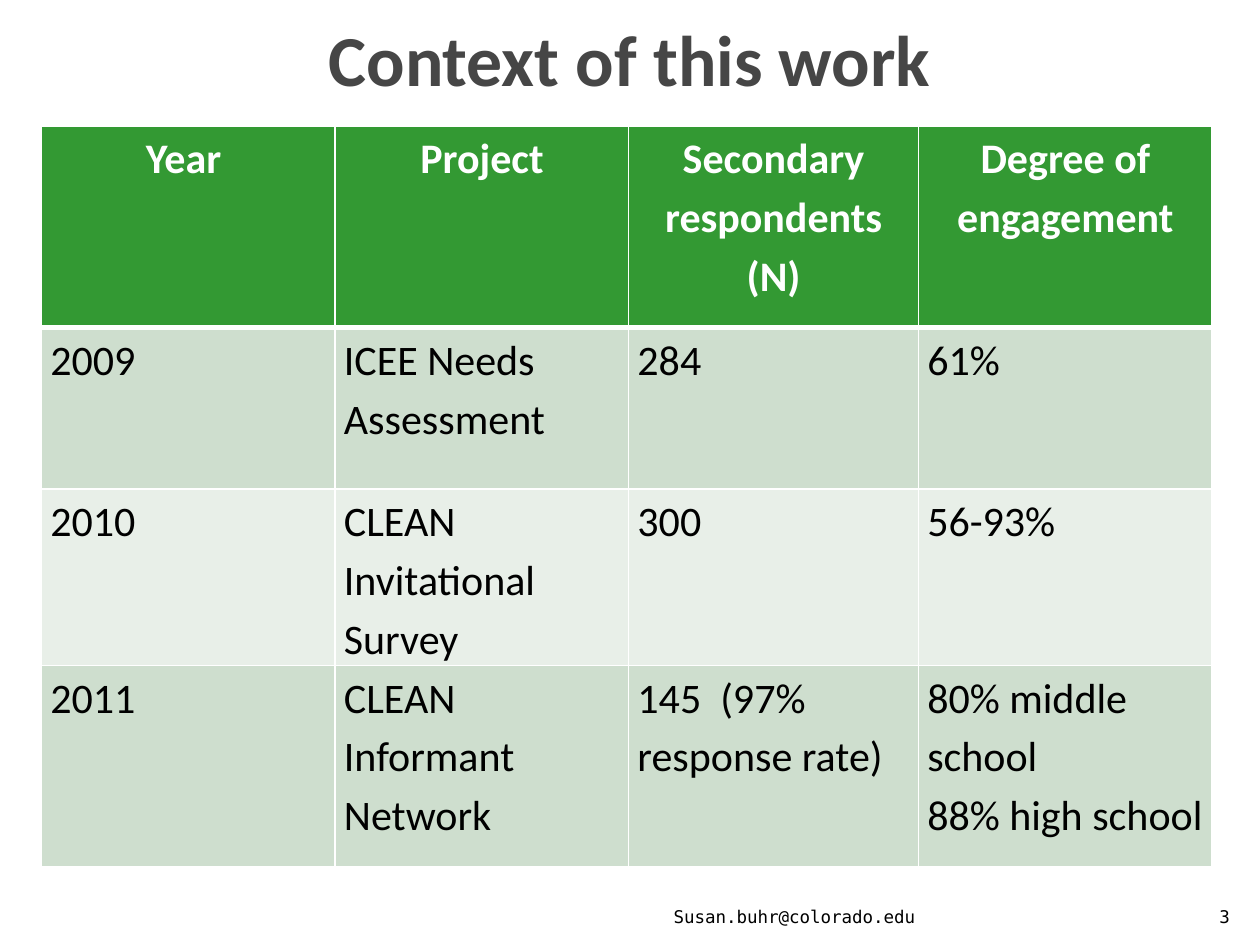
import pptx
import pptx.dml.color
import pptx.enum.text
import pptx.oxml
import pptx.oxml.ns
import pptx.util
from pptx.util import Inches

ALIGN = pptx.enum.text.PP_ALIGN
ANCHOR = pptx.enum.text.MSO_ANCHOR
HEADER_GREEN = "339933"
BAND_FILLS = ("CEDECE", "E8EFE8")
COLUMN_WIDTHS = (2.33, 2.33, 2.3, 2.33)
ROW_HEIGHTS = (1.6, 1.28, 1.28, 1.6)
ROWS = (
    ("Year ", "Project", "Secondary respondents (N)", "Degree of engagement"),
    ("2009", "ICEE Needs Assessment", "284", "61%"),
    ("2010", "CLEAN Invitational Survey", "300", "56-93%"),
    ("2011", "CLEAN Informant Network", "145  (97% response rate)",
     "80% middle school\n88% high school"),
)


def color(value):
    return pptx.dml.color.RGBColor.from_string(value)


def write_text(frame, text, *, size, font="Calibri", fill="000000", bold=False,
               align=ALIGN.LEFT, line_spacing=None):
    frame.word_wrap = True
    frame.text = text
    for paragraph in frame.paragraphs:
        paragraph.alignment = align
        paragraph.line_spacing = line_spacing
        for run in paragraph.runs:
            run.font.name = font
            run.font.size = pptx.util.Pt(size)
            run.font.bold = bold
            run.font.color.rgb = color(fill)


def add_borders(cell, top, bottom):
    """Draw white cell borders; the side lines are 1 point wide."""
    properties = cell._tc.get_or_add_tcPr()
    for side, width in (("L", 1), ("R", 1), ("T", top), ("B", bottom)):
        properties.append(pptx.oxml.parse_xml(
            f'<a:ln{side} {pptx.oxml.ns.nsdecls("a")} w="{pptx.util.Pt(width)}">'
            f'<a:solidFill><a:srgbClr val="FFFFFF"/></a:solidFill></a:ln{side}>'))


def add_title(slide, text, left, top, width, height):
    title = slide.shapes.title
    title.left, title.top = Inches(left), Inches(top)
    title.width, title.height = Inches(width), Inches(height)
    title.text_frame.vertical_anchor = ANCHOR.MIDDLE
    write_text(title.text_frame, text, size=41, fill="464646", bold=True,
               align=ALIGN.CENTER)


def add_project_table(slide, left, top):
    table = slide.shapes.add_table(
        len(ROWS), len(COLUMN_WIDTHS), Inches(left), Inches(top),
        Inches(sum(COLUMN_WIDTHS)), Inches(sum(ROW_HEIGHTS))).table
    for column, width in zip(table.columns, COLUMN_WIDTHS):
        column.width = Inches(width)
    for index, (row, height, texts) in enumerate(zip(table.rows, ROW_HEIGHTS, ROWS)):
        row.height = Inches(height)
        header = index == 0
        for cell, text in zip(row.cells, texts):
            cell.margin_left = cell.margin_right = Inches(0.07)
            cell.margin_top = cell.margin_bottom = 0
            add_borders(cell, top=3 if index == 1 else 1, bottom=3 if header else 1)
            cell.fill.solid()
            cell.fill.fore_color.rgb = color(
                HEADER_GREEN if header else BAND_FILLS[(index - 1) % 2])
            write_text(cell.text_frame, text, size=24, bold=header,
                       fill="FFFFFF" if header else "000000",
                       align=ALIGN.CENTER if header else ALIGN.LEFT,
                       line_spacing=1.15)


def add_footer_text(slide, text, left, top, width, height):
    box = slide.shapes.add_textbox(Inches(left), Inches(top),
                                   Inches(width), Inches(height))
    box.text_frame.vertical_anchor = ANCHOR.BOTTOM
    write_text(box.text_frame, text, size=10, font="DejaVu Sans Mono",
               align=ALIGN.RIGHT)


def main():
    presentation = pptx.Presentation()
    presentation.slide_width, presentation.slide_height = Inches(10), Inches(7.5)
    slide = presentation.slides.add_slide(presentation.slide_layouts[5])
    add_project_table(slide, 0.33, 1)
    add_title(slide, "Context of this work", 0.5, -0.17, 9, 1.25)
    add_footer_text(slide, "3", 9.46, 7.01, 0.4, 0.4)
    add_footer_text(slide, "Susan.buhr@colorado.edu", 4.79, 7.01, 2.57, 0.4)
    presentation.save("out.pptx")


if __name__ == "__main__":
    main()
